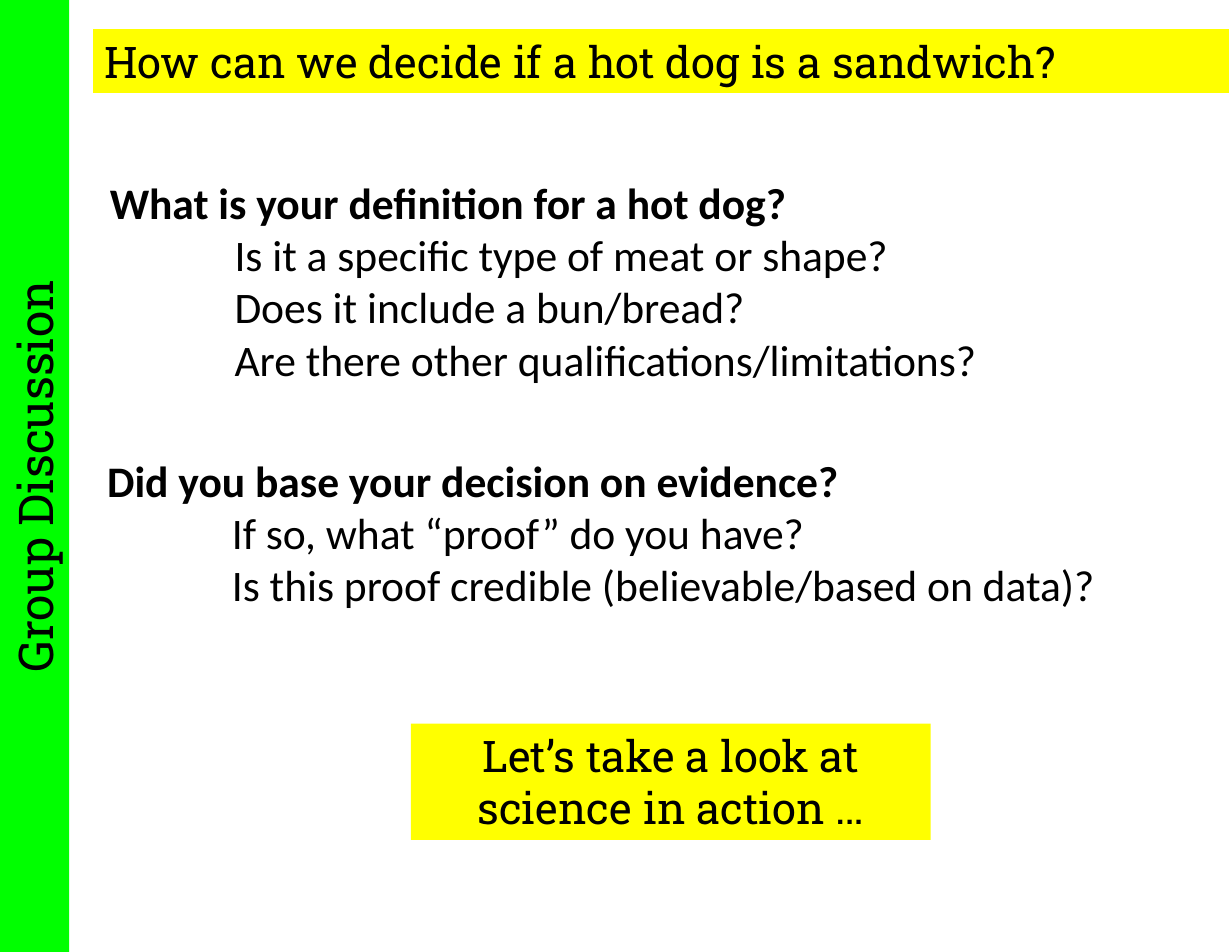
from pptx import Presentation
from pptx.dml.color import RGBColor
from pptx.enum import shapes, text
from pptx.util import Cm, Pt

# Content
TITLE = "How can we decide if a hot dog is a sandwich?"
SIDEBAR = "Group Discussion"
CLOSING = "Let’s take a look at science in action …"
QUESTIONS = [  # left, top, width, height in cm, then heading and prompts
    ((2.24, 3.86, 24.28, 6.25), "What is your definition for a hot dog?",
     ["Is it a specific type of meat or shape?",
      "Does it include a bun/bread?",
      "Are there other qualifications/limitations?"]),
    ((2.18, 10.16, 24.33, 3.84), "Did you base your decision on evidence?",
     ["If so, what “proof” do you have?",
      "Is this proof credible (believable/based on data)?"]),
]

# Format
WIDTH, HEIGHT, BAR = 27.94, 21.59, 1.57
SLAB, BODY = "Roboto Slab", "Calibri"
YELLOW, GREEN, BLACK = "FFFF00", "00FF00", "000000"
INDENT = 2.83


def color(fmt, value):
    fmt.rgb = RGBColor.from_string(value)


def paint(sp, value):
    sp.fill.solid()
    color(sp.fill.fore_color, value)
    sp.line.fill.background()


def place(sp, left, top, width, height):
    sp.left, sp.top, sp.width, sp.height = map(Cm, (left, top, width, height))


def write(sp, lines, font=SLAB, size=28, align=text.PP_ALIGN.LEFT,
          anchor=text.MSO_ANCHOR.TOP):
    """Fill a shape with lines of (text, bold, indent in cm)."""
    tf = sp.text_frame
    tf.word_wrap = True
    tf.auto_size = text.MSO_AUTO_SIZE.NONE
    tf.vertical_anchor = anchor
    for i, (words, bold, indent) in enumerate(lines):
        p = tf.add_paragraph() if i else tf.paragraphs[0]
        p.alignment = align
        if indent:
            p._p.get_or_add_pPr().set("marL", str(Cm(indent)))
        r = p.add_run()
        r.text = words
        r.font.name, r.font.size, r.font.bold = font, Pt(size), bold
        color(r.font.color, BLACK)


def add_banner(s, words, box, fill, **fmt):
    sp = s.shapes.add_shape(shapes.MSO_SHAPE.RECTANGLE, *map(Cm, box))
    sp.shadow.inherit = False
    paint(sp, fill)
    write(sp, [(words, False, 0)], align=text.PP_ALIGN.CENTER, **fmt)
    return sp


def main():
    prs = Presentation()
    prs.slide_width, prs.slide_height = Cm(WIDTH), Cm(HEIGHT)
    s = prs.slides.add_slide(prs.slide_layouts[5])

    # Title bar
    title = s.shapes.title
    place(title, 2.11, 0.66, 25.76, 1.45)
    paint(title, YELLOW)
    write(title, [(TITLE, False, 0)])

    # Questions with indented prompts
    for box, heading, prompts in QUESTIONS:
        sp = s.shapes.add_textbox(*map(Cm, box))
        write(sp, [(heading, True, 0)] + [(t, False, INDENT) for t in prompts],
              font=BODY)

    # Closing banner
    add_banner(s, CLOSING, (9.32, 16.41, 11.79, 2.64), YELLOW)

    # Sidebar: a full-height strip turned to read upwards
    side = add_banner(s, SIDEBAR,
                      ((BAR - HEIGHT) / 2, (HEIGHT - BAR) / 2, HEIGHT, BAR),
                      GREEN, size=30.8)
    side.rotation = 270

    prs.save("out.pptx")


if __name__ == "__main__":
    main()
